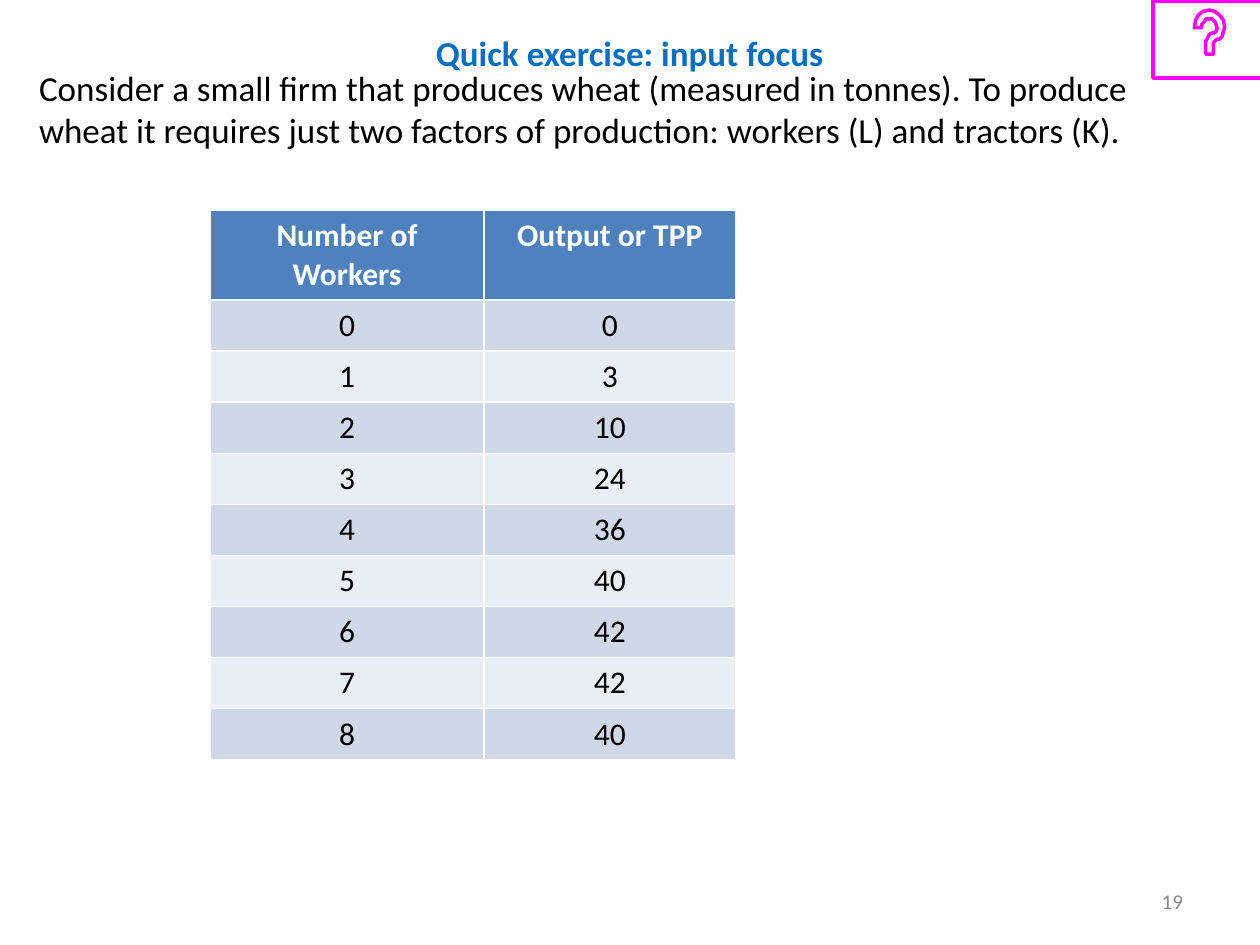
from dataclasses import dataclass

from pptx import Presentation
from pptx.dml.color import RGBColor
from pptx.enum import text
from pptx.util import Inches, Pt


@dataclass(frozen=True)
class Theme:
    font: str = "Calibri"
    blue: str = "006FC0"
    head: str = "4F81BD"
    bands: tuple = ("D0D8E8", "E9EDF4")
    black: str = "000000"
    white: str = "FFFFFF"
    gray: str = "888888"
    pink: str = "FF00FF"
    large: int = 20
    cell: int = 18
    small: int = 12


@dataclass(frozen=True)
class Box:
    left: float
    top: float
    width: float
    height: float

    def lengths(self) -> list:
        return [Inches(v) for v in (self.left, self.top, self.width, self.height)]


@dataclass(frozen=True)
class Style:
    size: int
    color: str
    bold: bool = False


THEME = Theme()
ROWS = [(0, 0), (1, 3), (2, 10), (3, 24), (4, 36),
        (5, 40), (6, 42), (7, 42), (8, 40)]
MARK = [(948, 22), (949, 16), (951, 12), (955, 9), (960, 8), (964, 9),
        (968, 12), (971, 16), (972, 22), (971, 25), (970, 29), (968, 31),
        (966, 31), (965, 32), (964, 33), (963, 34), (963, 36), (963, 43),
        (957, 43), (957, 36), (957, 33), (959, 29), (960, 27), (963, 26),
        (964, 26), (965, 25), (966, 23), (966, 22), (965, 19), (964, 17),
        (962, 15), (960, 15), (957, 15), (956, 17), (954, 19), (954, 22)]
FRAME = [(915, 62), (1004, 62), (1004, 1), (915, 1)]


def set_font(para, style: Style) -> None:
    font = para.font
    font.name = THEME.font
    font.size = Pt(style.size)
    font.bold = style.bold
    font.color.rgb = RGBColor.from_string(style.color)


def fill_text(shape, words: str, style: Style, indent: float = 0) -> None:
    frame = shape.text_frame
    frame.word_wrap = True
    frame.auto_size = text.MSO_AUTO_SIZE.NONE
    frame.vertical_anchor = text.MSO_ANCHOR.TOP
    frame.margin_left = Inches(indent)
    frame.margin_right = frame.margin_bottom = 0
    frame.margin_top = Inches(0.02)
    frame.text = words
    para = frame.paragraphs[0]
    para.alignment = text.PP_ALIGN.LEFT
    set_font(para, style)


def add_text(slide, box: Box, words: str, style: Style) -> None:
    fill_text(slide.shapes.add_textbox(*box.lengths()), words, style)


def add_path(group, points: list) -> None:
    pen = group.shapes.build_freeform(*points[0], scale=Inches(0.01))
    pen.add_line_segments(points[1:], close=True)
    shape = pen.convert_to_shape()
    shape.shadow.inherit = False
    shape.fill.background()
    shape.line.color.rgb = RGBColor.from_string(THEME.pink)
    shape.line.width = Pt(2)


def fill_row(table, row: int, words: tuple, color: str, style: Style) -> None:
    for col, word in enumerate(words):
        cell = table.cell(row, col)
        cell.text = str(word)
        cell.fill.solid()
        cell.fill.fore_color.rgb = RGBColor.from_string(color)
        para = cell.text_frame.paragraphs[0]
        para.alignment = text.PP_ALIGN.CENTER
        set_font(para, style)


def add_grid(slide, box: Box, head: float) -> None:
    table = slide.shapes.add_table(len(ROWS) + 1, 2, *box.lengths()).table
    for col, width in zip(table.columns, (2.17, 2)):
        col.width = Inches(width)
    table.rows[0].height = Inches(head)
    fill_row(table, 0, ("Number of Workers", "Output or TPP"),
             THEME.head, Style(THEME.cell, THEME.white, True))
    for row, pair in enumerate(ROWS, 1):
        table.rows[row].height = Inches((box.height - head) / len(ROWS))
        fill_row(table, row, pair, THEME.bands[(row - 1) % 2],
                 Style(THEME.cell, THEME.black))


def main() -> None:
    deck = Presentation()
    deck.slide_width, deck.slide_height = Inches(10), Inches(7.5)
    slide = deck.slides.add_slide(deck.slide_layouts[5])

    title = slide.shapes.title
    title.left, title.top, title.width, title.height = Box(0.28, 0.23, 8.58, 0.35).lengths()
    fill_text(title, "Quick exercise: input focus",
              Style(THEME.large, THEME.blue, True), 3.18)

    add_text(slide, Box(0.31, 0.51, 8.75, 0.7),
             "Consider a small firm that produces wheat (measured in tonnes). "
             "To produce wheat it requires just two factors of production: "
             "workers (L) and tractors (K).",
             Style(THEME.large, THEME.black))
    add_text(slide, Box(9.22, 7.03, 0.2, 0.23), "19", Style(THEME.small, THEME.gray))

    icon = slide.shapes.add_group_shape()
    for points in (MARK, FRAME):
        add_path(icon, points)
    add_grid(slide, Box(1.67, 1.67, 4.17, 4.35), 0.7)
    deck.save("out.pptx")


if __name__ == "__main__":
    main()
